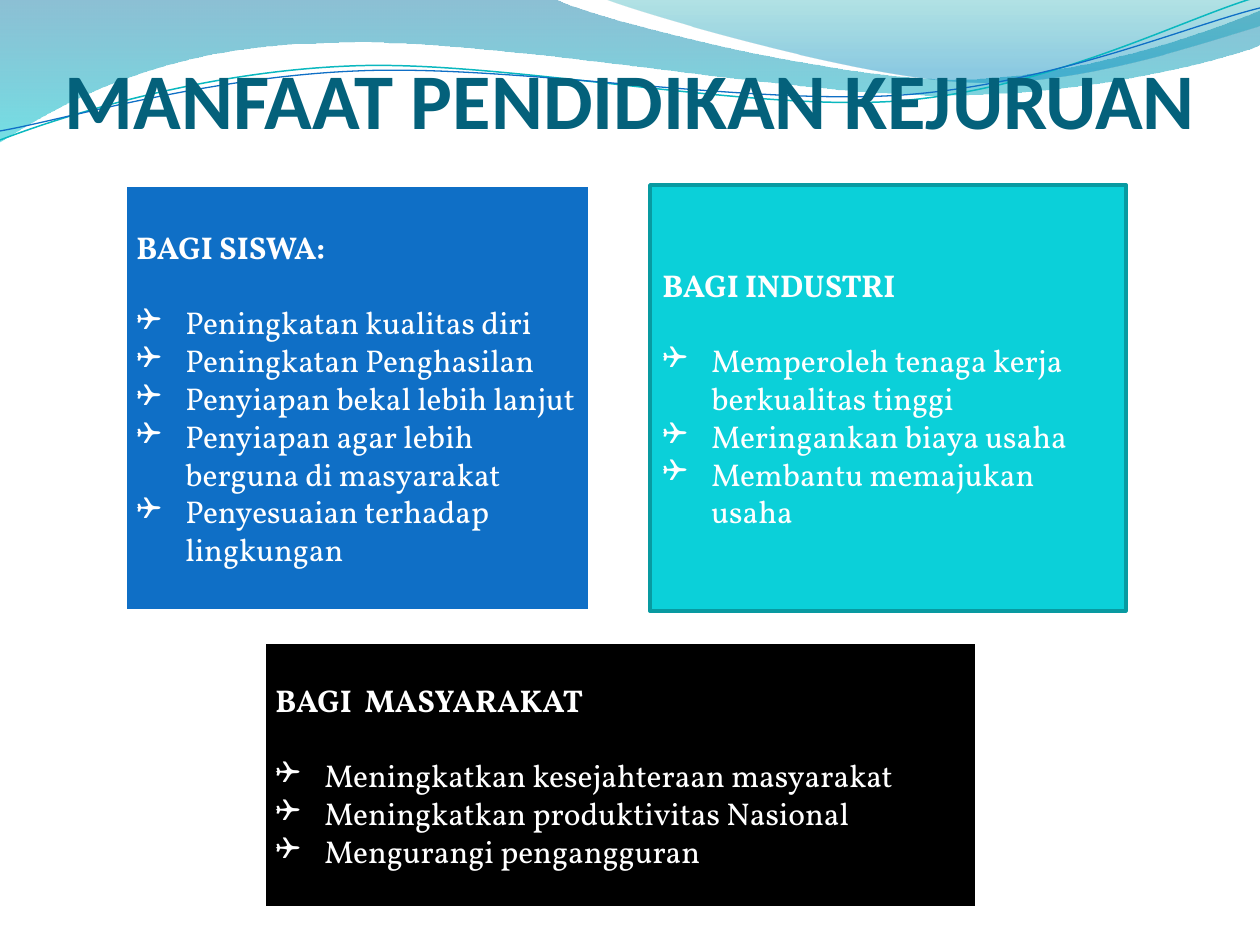
from lxml import etree
from pptx import Presentation
from pptx.dml.color import RGBColor
from pptx.enum.shapes import MSO_SHAPE as Shape
from pptx.enum.text import MSO_ANCHOR as Anchor, PP_ALIGN as Align
from pptx.oxml.ns import qn
from pptx.util import Pt

EMU_PER_PX = 914400 / 126
INDENT = 49

COLORS = {
    "title": "04617B", "white": "FFFFFF", "black": "000000",
    "blue": "0F6FC6", "cyan": "0BD0D9", "cyan_edge": "089AA1", "teal": "0AB8BF",
    "wave_blue": "0074A1", "wave_cyan": "00C6CF",
    "crest_green": "00A1A9", "crest_blue": "008BBF",
}

# Outlines: a start point, then segments of one point (line) or three (curve)
WAVE = [(0, 0), [(554, -1)],
        [(600, 21), (837, 79), (955, 79)], [(1074, 79), (1207, 33), (1260, 11)],
        [(1261, 45)],
        [(1239, 55), (1096, 96), (940, 95)], [(783, 95), (481, 35), (324, 43)],
        [(163, 45), (58, 105), (-1, 142)]]
CREST = [(604, -1), [(641, 14), (859, 78), (969, 82)],
         [(1079, 87), (1211, 40), (1260, 26)], [(1260, 0)]]
TEAL_LINE = [(0, 140), [(60, 117), (199, 72), (349, 66)],
             [(498, 59), (747, 112), (898, 101)], [(1050, 89), (1182, 19), (1257, -3)]]
BLUE_LINE = [(0, 131), [(59, 121), (207, 77), (357, 71)],
             [(508, 64), (751, 106), (903, 95)], [(1053, 84), (1187, 26), (1260, 8)]]

# Box, fill, edge, edge width, heading, benefits
PANELS = [
    ((124, 184, 467, 428), "blue", "white", 3, "BAGI SISWA:",
     ["Peningkatan kualitas diri", "Peningkatan Penghasilan",
      "Penyiapan bekal lebih lanjut", "Penyiapan agar lebih berguna di masyarakat",
      "Penyesuaian terhadap lingkungan"]),
    ((650, 185, 476, 426), "cyan", "cyan_edge", 2, "BAGI INDUSTRI",
     ["Memperoleh tenaga kerja berkualitas tinggi", "Meringankan biaya usaha",
      "Membantu memajukan usaha"]),
    ((263, 641, 715, 268), "black", "white", 3, "BAGI  MASYARAKAT",
     ["Meningkatkan kesejahteraan masyarakat", "Meningkatkan produktivitas Nasional",
      "Mengurangi pengangguran"]),
]


def px(length):
    return round(length * EMU_PER_PX)


def color(name):
    return RGBColor.from_string(COLORS[name])


def add_outline(slide, outline, close):
    """Freeform whose three-point segments become cubic curves."""
    start, *segments = outline
    builder = slide.shapes.build_freeform(*start, scale=EMU_PER_PX)
    for segment in segments:
        builder.add_line_segments(segment, close=False)
    if close:
        builder.add_line_segments([], close=True)
    shape = builder.convert_to_shape()
    shape.shadow.inherit = False

    lines = iter(list(shape.element.spPr.iter(qn("a:lnTo"))))
    for segment in segments:
        first, *others = [next(lines) for _ in segment]
        if others:
            first.tag = qn("a:cubicBezTo")
        for line in others:
            first.append(line[0])
            line.getparent().remove(line)
    return shape


def add_wave(slide, outline, stops):
    """Filled wave; each stop is color, position and opacity in percent."""
    shape = add_outline(slide, outline, True)
    shape.line.fill.background()
    shape.fill.gradient()
    shape.fill.gradient_angle = 270
    for stop, (name, position, _) in zip(shape.fill.gradient_stops, stops):
        stop.color.rgb = color(name)
        stop.position = position
    for rgb, (_, _, opacity) in zip(shape.element.spPr.iter(qn("a:srgbClr")), stops):
        etree.SubElement(rgb, qn("a:alpha"), val=str(opacity * 1000))


def add_wave_line(slide, outline, name, width):
    shape = add_outline(slide, outline, False)
    shape.fill.background()
    shape.line.color.rgb = color(name)
    shape.line.width = Pt(width)


def add_run(paragraph, text, font, size, name, bold):
    paragraph.alignment = Align.LEFT
    run = paragraph.add_run()
    run.text = text
    run.font.name = font
    run.font.size = Pt(size)
    run.font.bold = bold
    run.font.color.rgb = color(name)


def add_bullet(paragraph):
    properties = paragraph._p.get_or_add_pPr()
    properties.set("marL", str(px(INDENT)))
    properties.set("indent", str(-px(INDENT)))
    etree.SubElement(properties, qn("a:buFont"), typeface="Wingdings", charset="2")
    etree.SubElement(properties, qn("a:buChar"), char="❑")


def add_title(slide, text):
    frame = slide.shapes.add_textbox(px(65), px(36), px(1134), px(109)).text_frame
    frame.word_wrap = True
    frame.vertical_anchor = Anchor.BOTTOM
    frame.margin_left = frame.margin_right = frame.margin_bottom = 0
    add_run(frame.paragraphs[0], text, "Calibri", 45, "title", True)


def add_panel(slide, box, fill, edge, edge_width, heading, benefits):
    shape = slide.shapes.add_shape(Shape.RECTANGLE, *map(px, box))
    shape.shadow.inherit = False
    shape.fill.solid()
    shape.fill.fore_color.rgb = color(fill)
    shape.line.color.rgb = color(edge)
    shape.line.width = Pt(edge_width)

    frame = shape.text_frame
    frame.word_wrap = True
    frame.vertical_anchor = Anchor.MIDDLE
    paragraph = frame.paragraphs[0]
    paragraph.space_after = Pt(21.6)
    add_run(paragraph, heading, "Vollkorn", 18, "white", True)
    for benefit in benefits:
        paragraph = frame.add_paragraph()
        add_run(paragraph, benefit, "Vollkorn", 18, "white", False)
        add_bullet(paragraph)


def main():
    presentation = Presentation()
    presentation.slide_width = px(1260)
    presentation.slide_height = px(945)
    slide = presentation.slides.add_slide(presentation.slide_layouts[6])

    # Wave decoration along the top
    add_wave(slide, WAVE, [("wave_blue", 0, 45), ("wave_cyan", 1, 55)])
    add_wave(slide, CREST, [("crest_green", 0, 30), ("crest_blue", 0.8, 45)])
    add_wave_line(slide, TEAL_LINE, "teal", 0.85)
    add_wave_line(slide, BLUE_LINE, "blue", 0.75)

    # Title and the three groups that benefit
    add_title(slide, "MANFAAT PENDIDIKAN KEJURUAN")
    for panel in PANELS:
        add_panel(slide, *panel)

    presentation.save("out.pptx")


if __name__ == "__main__":
    main()
